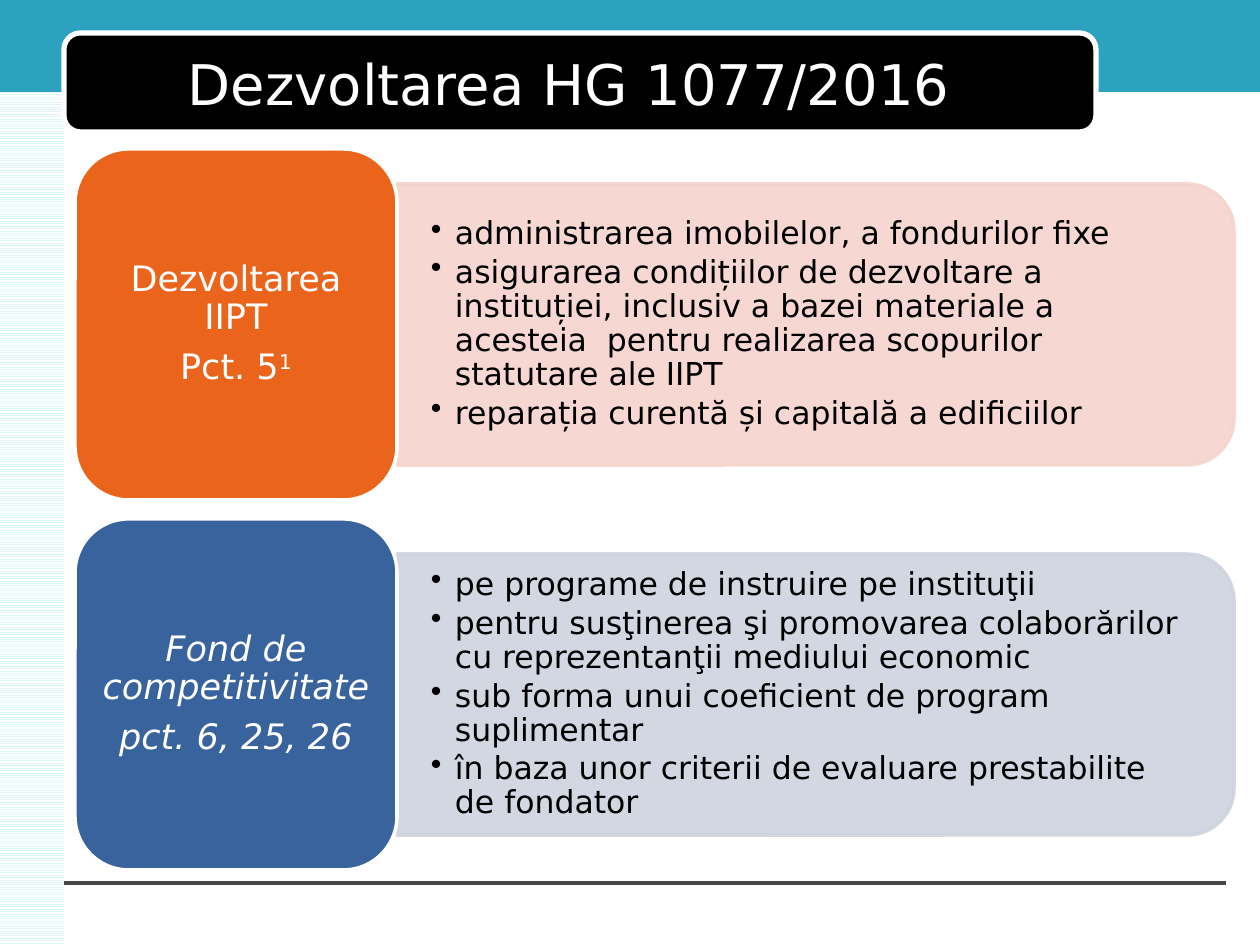
"""Build the slide on the development of HG 1077/2016."""
from dataclasses import dataclass

from lxml.etree import SubElement
from pptx import Presentation
from pptx.dml.color import RGBColor
from pptx.enum.dml import MSO_PATTERN
from pptx.enum.shapes import MSO_CONNECTOR, MSO_SHAPE
from pptx.enum.text import MSO_ANCHOR, PP_ALIGN
from pptx.oxml.ns import qn
from pptx.util import Emu, Pt

TITLE = "Dezvoltarea HG 1077/2016"
SECTIONS = [
    {
        "label": [["Dezvoltarea IIPT"], ["Pct. 5", "1"]],
        "italic": False,
        "points": [
            ["administrarea imobilelor, a fondurilor fixe"],
            ["asigurarea condițiilor de dezvoltare a instituției, inclusiv a bazei "
             "materiale a acesteia  pentru realizarea scopurilor statutare ale IIPT"],
            ["reparația curentă și capitală a edificiilor"],
        ],
        "fill": "EB641B",
        "tint": "F7D3CD",
    },
    {
        "label": [["Fond de competitivitate"], ["pct. 6, 25, 26"]],
        "italic": True,
        "points": [
            ["pe programe de instruire pe instituţii"],
            ["pentru susţinerea şi promovarea colaborărilor cu reprezentanţii "
             "mediului economic"],
            ["sub forma unui coeficient de program suplimentar"],
            ["în baza unor criterii de evaluare prestabilite de fondator"],
        ],
        "fill": "39639D",
        "tint": "CED3DF",
    },
]


@dataclass(frozen=True)
class Theme:
    font: str = "DejaVu Sans"
    white: str = "FFFFFF"
    black: str = "000000"
    header: str = "2DA2BF"
    stripe: str = "DEF5FA"
    rule: str = "464646"
    title_size: int = 32
    label_size: int = 20
    point_size: int = 18
    panel_alpha: int = 90


THEME = Theme()
WIDTH, HEIGHT = 1260, 945
MARGIN = 64
LABEL_LEFT, LABEL_TOP, LABEL_WIDTH, LABEL_HEIGHT = 75, 149, 322, 351
SECTION_PITCH = 370
PANEL_WIDTH, PANEL_HEIGHT = 837, 281
POINTS_WIDTH, POINTS_HEIGHT = 823, 254
BULLET_INDENT = 24


def px(value):
    return Emu(round(value * 914400 / 126))


def color(value):
    return RGBColor.from_string(value)


def add_box(slide, kind, left, top, width, height, fill=None, line=None, line_width=2):
    shape = slide.shapes.add_shape(kind, px(left), px(top), px(width), px(height))
    shape.shadow.inherit = False
    if fill:
        shape.fill.solid()
        shape.fill.fore_color.rgb = color(fill)
    if line:
        shape.line.color.rgb = color(line)
        shape.line.width = Pt(line_width)
    else:
        shape.line.fill.background()
    return shape


def set_text(shape, paragraphs, *, size, ink, align=PP_ALIGN.LEFT, italic=False,
             insets=(10, 5), line_spacing=1.0, space_after=0, bullet=None):
    frame = shape.text_frame
    frame.word_wrap = True
    frame.vertical_anchor = MSO_ANCHOR.MIDDLE
    frame.margin_left = frame.margin_right = px(insets[0])
    frame.margin_top = frame.margin_bottom = px(insets[1])
    for index, (text, *superscripts) in enumerate(paragraphs):
        paragraph = frame.add_paragraph() if index else frame.paragraphs[0]
        paragraph.alignment = align
        paragraph.line_spacing = line_spacing
        paragraph.space_after = Pt(space_after)
        if bullet:
            paragraph.level = 1
            properties = paragraph._p.get_or_add_pPr()
            properties.set("marL", str(px(BULLET_INDENT)))
            properties.set("indent", str(-px(BULLET_INDENT)))
            SubElement(properties, qn("a:buChar"), char=bullet)
        for position, part in enumerate([text, *superscripts]):
            run = paragraph.add_run()
            run.text = part
            run.font.name = THEME.font
            run.font.size = Pt(size)
            run.font.italic = italic
            run.font.color.rgb = color(ink)
            if position:
                run._r.get_or_add_rPr().set("baseline", "30000")


def add_text_box(slide, left, top, width, height, paragraphs, **text_format):
    box = slide.shapes.add_textbox(px(left), px(top), px(width), px(height))
    set_text(box, paragraphs, **text_format)


def add_frame(slide):
    stripes = add_box(slide, MSO_SHAPE.RECTANGLE, 0, 0, MARGIN, HEIGHT)
    stripes.fill.patterned()
    stripes.fill.pattern = MSO_PATTERN.LIGHT_HORIZONTAL
    stripes.fill.fore_color.rgb = color(THEME.stripe)
    stripes.fill.back_color.rgb = color(THEME.white)
    add_box(slide, MSO_SHAPE.RECTANGLE, 0, -4, WIDTH, 96, THEME.header)
    rule = slide.shapes.add_connector(
        MSO_CONNECTOR.STRAIGHT, px(MARGIN), px(883), px(1226), px(883))
    rule.line.color.rgb = color(THEME.rule)
    rule.line.width = Pt(0)
    SubElement(rule._element.spPr, qn("a:effectLst"))
    add_box(slide, MSO_SHAPE.ROUNDED_RECTANGLE, MARGIN, 33, 1032, 99,
            THEME.black, THEME.white, 3)
    add_text_box(slide, 76, 44, 986, 78, [[TITLE]], size=THEME.title_size,
                 ink=THEME.white, align=PP_ALIGN.CENTER)


def add_section(slide, section, top):
    middle = top + LABEL_HEIGHT / 2
    panel_left = LABEL_LEFT + LABEL_WIDTH
    panel = add_box(slide, MSO_SHAPE.ROUND_2_SAME_RECTANGLE,
                    panel_left + (PANEL_WIDTH - PANEL_HEIGHT) / 2,
                    middle - PANEL_WIDTH / 2, PANEL_HEIGHT, PANEL_WIDTH,
                    section["tint"], section["tint"])
    panel.rotation = 90
    for tint in panel._element.spPr.iter(qn("a:srgbClr")):
        SubElement(tint, qn("a:alpha"), val=str(THEME.panel_alpha * 1000))
    add_text_box(slide, panel_left, middle - POINTS_HEIGHT / 2, POINTS_WIDTH,
                 POINTS_HEIGHT, section["points"], size=THEME.point_size,
                 ink=THEME.black, insets=(34, 18), line_spacing=0.9,
                 space_after=2.7, bullet="•")
    label = add_box(slide, MSO_SHAPE.ROUNDED_RECTANGLE, LABEL_LEFT, top,
                    LABEL_WIDTH, LABEL_HEIGHT, section["fill"], THEME.white)
    set_text(label, section["label"], size=THEME.label_size, ink=THEME.white,
             align=PP_ALIGN.CENTER, italic=section["italic"],
             line_spacing=0.9, space_after=7)


def main():
    presentation = Presentation()
    presentation.slide_width, presentation.slide_height = px(WIDTH), px(HEIGHT)
    slide = presentation.slides.add_slide(presentation.slide_layouts[6])
    add_frame(slide)
    for index, section in enumerate(SECTIONS):
        add_section(slide, section, LABEL_TOP + index * SECTION_PITCH)
    presentation.save("out.pptx")


if __name__ == "__main__":
    main()
